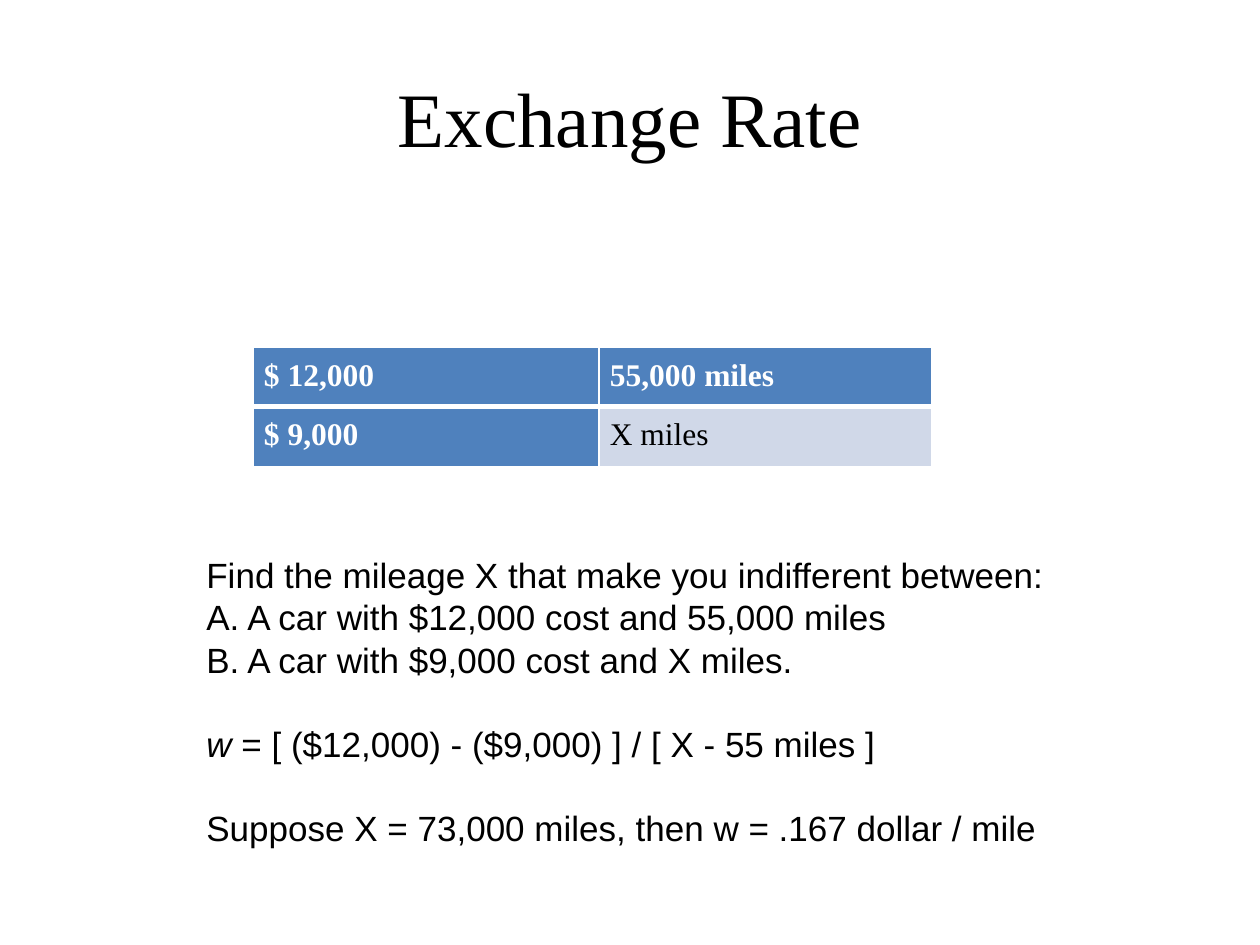
from lxml.etree import SubElement
from pptx import Presentation
from pptx.dml.color import RGBColor
from pptx.enum.text import MSO_ANCHOR as Anchor, PP_ALIGN as Align
from pptx.oxml.ns import qn
from pptx.util import Emu, Pt

BLACK = RGBColor(0x00, 0x00, 0x00)
WHITE = RGBColor(0xFF, 0xFF, 0xFF)
BLUE = RGBColor(0x4F, 0x81, 0xBD)
PALE_BLUE = RGBColor(0xD0, 0xD8, 0xE8)
SERIF = "Times New Roman"
SANS = "Arial"

RATES = [["$ 12,000", "55,000 miles"], ["$ 9,000", "X miles"]]
QUESTION = [
    "Find the mileage X that make you indifferent between:",
    "A. A car with $12,000 cost and 55,000 miles",
    "B. A car with $9,000 cost and X miles.",
]
FORMULA = ("w", " = [ ($12,000) - ($9,000) ] / [ X - 55 miles ]")
ANSWER = "Suppose X = 73,000 miles, then w = .167 dollar / mile"


def px(length):
    """Turn pixels into EMU."""
    return Emu(round(length * 914400 / 126))


def style_font(paragraph, name, size, color, bold=False):
    """Set the font of a whole paragraph."""
    font = paragraph.font
    font.name, font.size, font.bold = name, Pt(size), bold
    font.color.rgb = color


def add_text_frame(slide, box):
    """Add a wrapping, vertically centred text box and return its frame."""
    frame = slide.shapes.add_textbox(*map(px, box)).text_frame
    frame.word_wrap = True
    frame.vertical_anchor = Anchor.MIDDLE
    return frame


def add_title(slide, box):
    """Place the centred slide title."""
    paragraph = add_text_frame(slide, box).paragraphs[0]
    paragraph.text = "Exchange Rate"
    paragraph.alignment = Align.CENTER
    style_font(paragraph, SERIF, 44, BLACK)


def set_borders(cell, bottom_width):
    """Draw white cell borders, with a bottom one of the given points."""
    properties = cell._tc.get_or_add_tcPr()
    for side, width in (("L", 1), ("R", 1), ("T", 1), ("B", bottom_width)):
        line = SubElement(properties, qn(f"a:ln{side}"), w=str(Pt(width)))
        fill = SubElement(line, qn("a:solidFill"))
        SubElement(fill, qn("a:srgbClr"), val=str(WHITE))


def add_rate_table(slide, box):
    """Place the price and mileage table with a header row and column."""
    table = slide.shapes.add_table(2, 2, *map(px, box)).table
    table.first_col = True
    first_width = 346
    table.columns[0].width = px(first_width)
    table.columns[1].width = px(box[2] - first_width)
    for i, row in enumerate(RATES):
        for j, text in enumerate(row):
            cell = table.cell(i, j)
            header = i == 0 or j == 0
            set_borders(cell, 3 if i == 0 else 1)
            cell.fill.solid()
            cell.fill.fore_color.rgb = BLUE if header else PALE_BLUE
            cell.margin_left = cell.margin_right = px(11)
            cell.margin_top = cell.margin_bottom = px(11)
            cell.text = text
            style_font(cell.text_frame.paragraphs[0], SERIF, 18,
                       WHITE if header else BLACK, header)


def add_explanation(slide, box):
    """Place the question, the formula and the answer."""
    frame = add_text_frame(slide, box)
    lines = [(text,) for text in QUESTION] + [FORMULA, (ANSWER,)]
    for index, parts in enumerate(lines):
        paragraph = frame.add_paragraph() if index else frame.paragraphs[0]
        for part in parts:
            run = paragraph.add_run()
            run.text = part
            if part == FORMULA[0]:
                run.font.italic = True
        paragraph.line_spacing = Pt(24)
        paragraph.space_before = Pt(24 if index >= len(QUESTION) else 0)
        style_font(paragraph, SANS, 20, BLACK)


def main():
    """Build and save the presentation."""
    presentation = Presentation()
    presentation.slide_width, presentation.slide_height = px(1260), px(945)
    slide = presentation.slides.add_slide(presentation.slide_layouts[6])
    add_title(slide, (63, 38, 1134, 157))
    add_rate_table(slide, (253, 347, 679, 116))
    add_explanation(slide, (194, 546, 872, 310))
    presentation.save("out.pptx")


if __name__ == "__main__":
    main()
